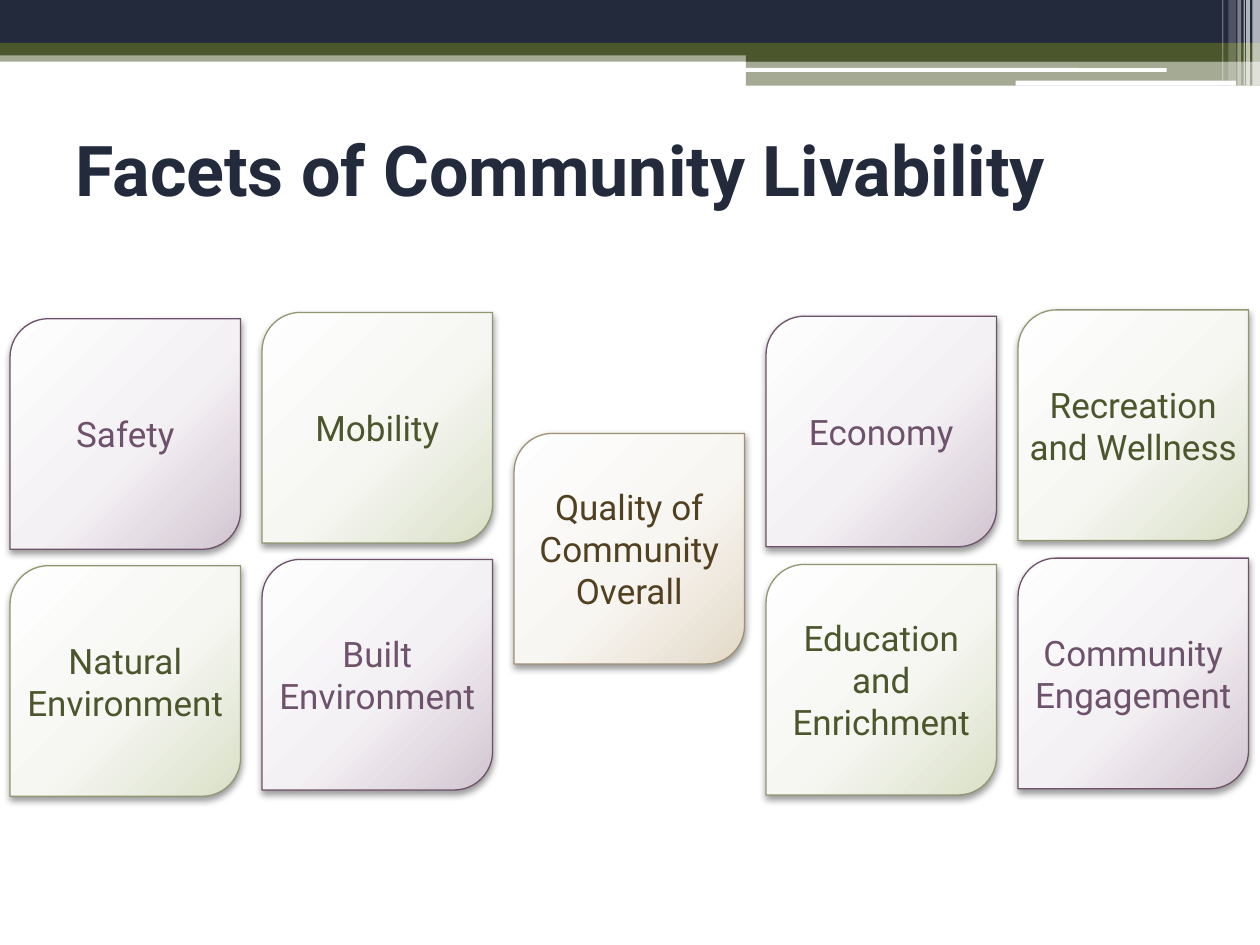
from pptx import Presentation, oxml
from pptx import util as u
from pptx.dml import color
from pptx.enum import shapes, text
from pptx.oxml import ns

KIND = shapes.MSO_SHAPE
NAVY, OLIVE, WHITE = "222A3C", "4C562C", "FFFFFF"
STYLES = {
    "plum": ("6E526B", "6E526B", "F4F1F4", "D2C6D1"),
    "green": (OLIVE, "909872", "F6F7F2", "DAE0C8"),
    "tan": ("514120", "9F9176", "F8F6F2", "E3D9C8"),
}
BANDS = [
    (0, 0.4, 10, 0.09, OLIVE, 50),
    (0, 0, 10, 0.34, NAVY, 100),
    (0, 0.34, 10, 0.1, OLIVE, 100),
    (5.92, 0.39, 4.08, 0.1, OLIVE, 100),
    (5.92, 0.48, 4.08, 0.2, OLIVE, 50),
]
BARS = [(5.91, 0.54, 3.35, 0.03), (8.06, 0.64, 1.75, 0.04)]
STRIPES = [
    (9.94, 0.06, 0.68, 65),
    (9.89, 0.03, 0.68, 65),
    (9.87, 0.01, 0.68, 60),
    (9.82, 0.03, 0.68, 40),
    (9.75, 0.06, 0.64, 20),
    (9.7, 0.01, 0.64, 30),
]
PAIRS = [
    (0, 2.53, 4.49, ("Safety", "plum"), ("Natural Environment", "green")),
    (1, 2.48, 4.44, ("Mobility", "green"), ("Built Environment", "plum")),
    (3, 2.51, 4.48, ("Economy", "plum"), ("Education and Enrichment", "green")),
    (4, 2.46, 4.43, ("Recreation and Wellness", "green"), ("Community Engagement", "plum")),
]
SIDE, LEFT, STEP = 1.83, 0.08, 2


def rgb(code):
    return color.RGBColor.from_string(code)


def put(item, **vals):
    for name, val in vals.items():
        setattr(item, name, val)


def node(tag, body):
    return oxml.parse_xml(f"<a:{tag} {ns.nsdecls('a')}{body}")


def shape(slide, kind, *box):
    item = slide.shapes.add_shape(kind, *map(u.Inches, box))
    item.shadow.inherit = False
    return item


def block(slide, x, y, w, h, code, alpha=100, kind=KIND.RECTANGLE):
    item = shape(slide, kind, x, y, w, h)
    item.fill.solid()
    item.fill.fore_color.rgb = rgb(code)
    item.line.fill.background()
    if alpha < 100:
        tint = item._element.spPr.find(".//" + ns.qn("a:srgbClr"))
        tint.append(node("alpha", f' val="{alpha * 1000}"/>'))


def write(item, words, size, code, bold=False, **vals):
    frame = item.text_frame
    put(frame, word_wrap=True, vertical_anchor=text.MSO_ANCHOR.MIDDLE, **vals)
    run = frame.paragraphs[0].add_run()
    run.text = words
    put(run.font, name="Roboto", size=u.Pt(size), bold=bold)
    run.font.color.rgb = rgb(code)
    return frame.paragraphs[0]


def shade(item, mid, end):
    stops = "".join(
        f'<a:gs pos="{pos}000"><a:srgbClr val="{code}"/></a:gs>'
        for pos, code in ((0, "FEFEFE"), (55, mid), (100, end)))
    grad = node("gradFill", f' rotWithShape="1"><a:gsLst>{stops}</a:gsLst>'
                '<a:path path="circle"><a:fillToRect l="-40000" t="-90000" '
                'r="140000" b="190000"/></a:path></a:gradFill>')
    item.fill.background()
    props = item._element.spPr
    props.replace(props.find(ns.qn("a:noFill")), grad)
    props.find(ns.qn("a:effectLst")).append(node(
        "outerShdw", f' blurRad="{u.Pt(4.1)}" dist="{u.Pt(2)}" dir="5400000" '
        'rotWithShape="0"><a:srgbClr val="000000"><a:alpha val="40000"/>'
        '</a:srgbClr></a:outerShdw>'))


def tile(slide, col, top, words, style):
    ink, edge, mid, end = STYLES[style]
    item = shape(slide, KIND.ROUND_2_DIAG_RECTANGLE,
                 LEFT + STEP * col, top, SIDE, SIDE)
    shade(item, mid, end)
    item.line.color.rgb = rgb(edge)
    item.line.width = u.Pt(0.75)
    para = write(item, words, 20, ink, margin_left=0, margin_right=0,
                 margin_top=0, margin_bottom=0)
    para.alignment = text.PP_ALIGN.CENTER


def header(slide):
    for band in BANDS:
        block(slide, *band)
    for bar in BARS:
        block(slide, *bar, WHITE, kind=KIND.ROUNDED_RECTANGLE)
    for x, w, h, alpha in STRIPES:
        block(slide, x, 0, w, h, WHITE, alpha)


def title(slide, words):
    box = slide.shapes.add_textbox(*map(u.Inches, (0.5, 0.92, 9, 0.83)))
    write(box, words, 40, NAVY, bold=True)


def main():
    deck = Presentation()
    put(deck, slide_width=u.Inches(10), slide_height=u.Inches(7.5))
    slide = deck.slides.add_slide(deck.slide_layouts[6])
    header(slide)
    title(slide, "Facets of Community Livability")
    for col, high, low, upper, lower in PAIRS:
        tile(slide, col, high, *upper)
        tile(slide, col, low, *lower)
    tile(slide, 2, 3.44, "Quality of Community Overall", "tan")
    deck.save("out.pptx")


if __name__ == "__main__":
    main()
